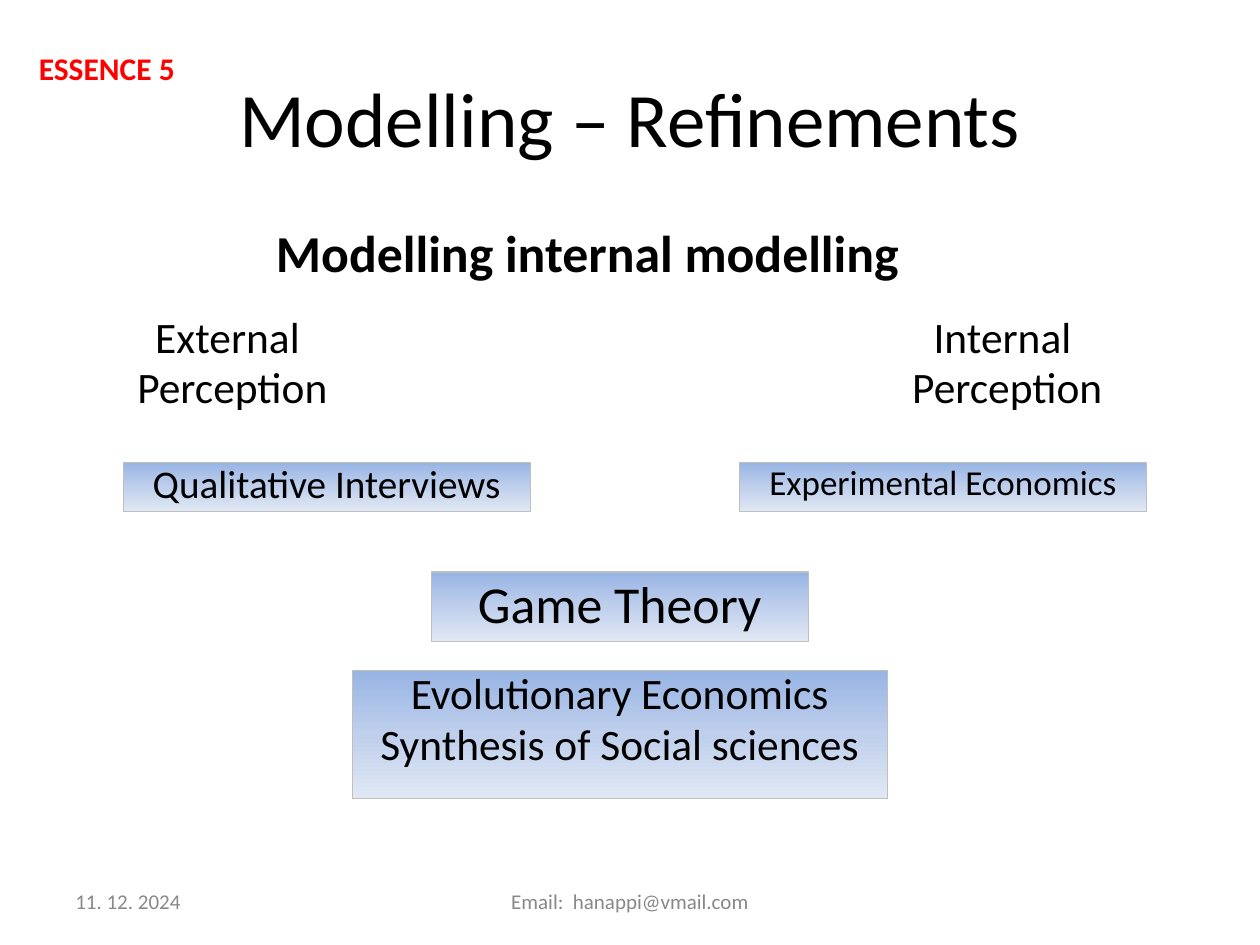
from copy import deepcopy
from dataclasses import dataclass

from lxml import etree
from pptx import Presentation
from pptx.dml.color import RGBColor
from pptx.enum.shapes import MSO_SHAPE
from pptx.enum.text import MSO_ANCHOR, MSO_AUTO_SIZE, PP_ALIGN
from pptx.oxml.ns import qn
from pptx.util import Inches, Pt

LEFT, CENTER = PP_ALIGN.LEFT, PP_ALIGN.CENTER
TOP, MIDDLE = MSO_ANCHOR.TOP, MSO_ANCHOR.MIDDLE
RECTANGLE = MSO_SHAPE.RECTANGLE
NO_FIT = MSO_AUTO_SIZE.NONE
TITLE_AND_CONTENT = 1


@dataclass(frozen=True)
class Theme:
    font: str = "Calibri"
    ink: str = "000000"
    muted: str = "888888"
    accent: str = "FF0000"
    border: str = "BFBFBF"
    gradient: tuple = ("97B4E4", "BFCFEC", "E0E8F4")
    title: float = 44
    heading: float = 29.6
    label: float = 24.8
    method: float = 22.4
    method_small: float = 20
    tag: float = 18
    footer: float = 12


THEME = Theme()
HANGING = 0.38


def place(shape, box):
    shape.left, shape.top, shape.width, shape.height = map(Inches, box)


def write(shape, text, size, color=THEME.ink, bold=False, align=CENTER,
          anchor=TOP, spacing=1.0, hanging=0, inset=0.05):
    """Fill a shape with one paragraph per line of text."""
    frame = shape.text_frame
    frame.word_wrap = True
    frame.auto_size = NO_FIT
    frame.vertical_anchor = anchor
    frame.margin_left = frame.margin_right = Inches(0.1)
    frame.margin_top = frame.margin_bottom = Inches(inset)
    for index, line in enumerate(text.split("\n")):
        para = frame.add_paragraph() if index else frame.paragraphs[0]
        para.alignment = align
        para.line_spacing = spacing
        para.space_before = Pt(5 if index else 0)
        properties = para._p.get_or_add_pPr()
        properties.set("marL", str(Inches(hanging)))
        properties.set("indent", str(Inches(-hanging)))
        etree.SubElement(properties, qn("a:buNone"))
        span = para.add_run()
        span.text = line
        span.font.name = THEME.font
        span.font.size = Pt(size)
        span.font.bold = bold
        span.font.color.rgb = RGBColor.from_string(color)


def add_text(page, box, text, size, **style):
    write(page.shapes.add_textbox(*map(Inches, box)), text, size, **style)


def fill_gradient(shape):
    """Shade a shape from top to bottom in three even stops."""
    shape.fill.gradient()
    shape.fill.gradient_angle = 270
    stop_list = shape._element.spPr.find(qn("a:gradFill")).find(qn("a:gsLst"))
    stop_list.insert(1, deepcopy(stop_list[0]))
    for index, stop in enumerate(shape.fill.gradient_stops):
        stop.position = index / 2
        stop.color.rgb = RGBColor.from_string(THEME.gradient[index])


def add_method(page, box, text, size, spacing=0.8):
    shape = page.shapes.add_shape(RECTANGLE, *map(Inches, box))
    shape.shadow.inherit = False
    fill_gradient(shape)
    shape.line.color.rgb = RGBColor.from_string(THEME.border)
    shape.line.width = Pt(0.75)
    write(shape, text, size, spacing=spacing, hanging=HANGING)


def add_header(page, box):
    left, top, width, height = box
    title, heading = page.shapes.title, page.placeholders[1]
    place(title, box)
    write(title, "Modelling – Refinements", THEME.title, anchor=MIDDLE)
    place(heading, (left + 1.59, top + height + 0.15, 5.52, 0.63))
    write(heading, "Modelling internal modelling", THEME.heading, bold=True,
          align=LEFT, hanging=HANGING)
    add_text(page, (0.21, top - 0.01, 1.42, 0.49), "ESSENCE 5", THEME.tag,
             color=THEME.accent, bold=True, align=LEFT, inset=0.1)


def add_perceptions(page, box):
    """Two labels at the outer edges of the box."""
    left, top, width, height = box
    label_width = 2.99
    for kind, x in (("External", left), ("Internal", left + width - label_width)):
        add_text(page, (x, top, label_width, height), f"{kind} \nPerception",
                 THEME.label, spacing=0.8, hanging=HANGING)


def add_methods(page, box):
    """Two methods side by side, then two centred below them."""
    left, top, width, height = box
    pair_width = 3.23
    add_method(page, (left, top, pair_width, 0.39),
               "Qualitative Interviews", THEME.method)
    add_method(page, (left + width - pair_width, top, pair_width, 0.39),
               "Experimental Economics", THEME.method_small)
    middle = left + width / 2 - 0.12
    add_method(page, (middle - 2.99 / 2, top + 0.87, 2.99, 0.55),
               "Game Theory", THEME.heading, spacing=0.9)
    add_method(page, (middle - 4.25 / 2, top + height - 1.02, 4.25, 1.02),
               "Evolutionary Economics\nSynthesis of Social sciences", THEME.label)


def add_footer(page, box):
    left, top, width, height = box
    style = dict(color=THEME.muted, anchor=MIDDLE)
    add_text(page, (left, top, 2.33, height), "11. 12. 2024", THEME.footer,
             align=LEFT, **style)
    add_text(page, (left + (width - 3.17) / 2, top, 3.17, height),
             "Email:  hanappi@vmail.com", THEME.footer, **style)


def main():
    deck = Presentation()
    deck.slide_width, deck.slide_height = Inches(10), Inches(7.5)
    page = deck.slides.add_slide(deck.slide_layouts[TITLE_AND_CONTENT])
    add_header(page, (0.5, 0.3, 9, 1.25))
    add_perceptions(page, (0.35, 2.49, 9.14, 0.87))
    add_methods(page, (0.98, 3.67, 8.12, 2.67))
    add_footer(page, (0.5, 6.95, 9, 0.4))
    deck.save("out.pptx")


if __name__ == "__main__":
    main()
